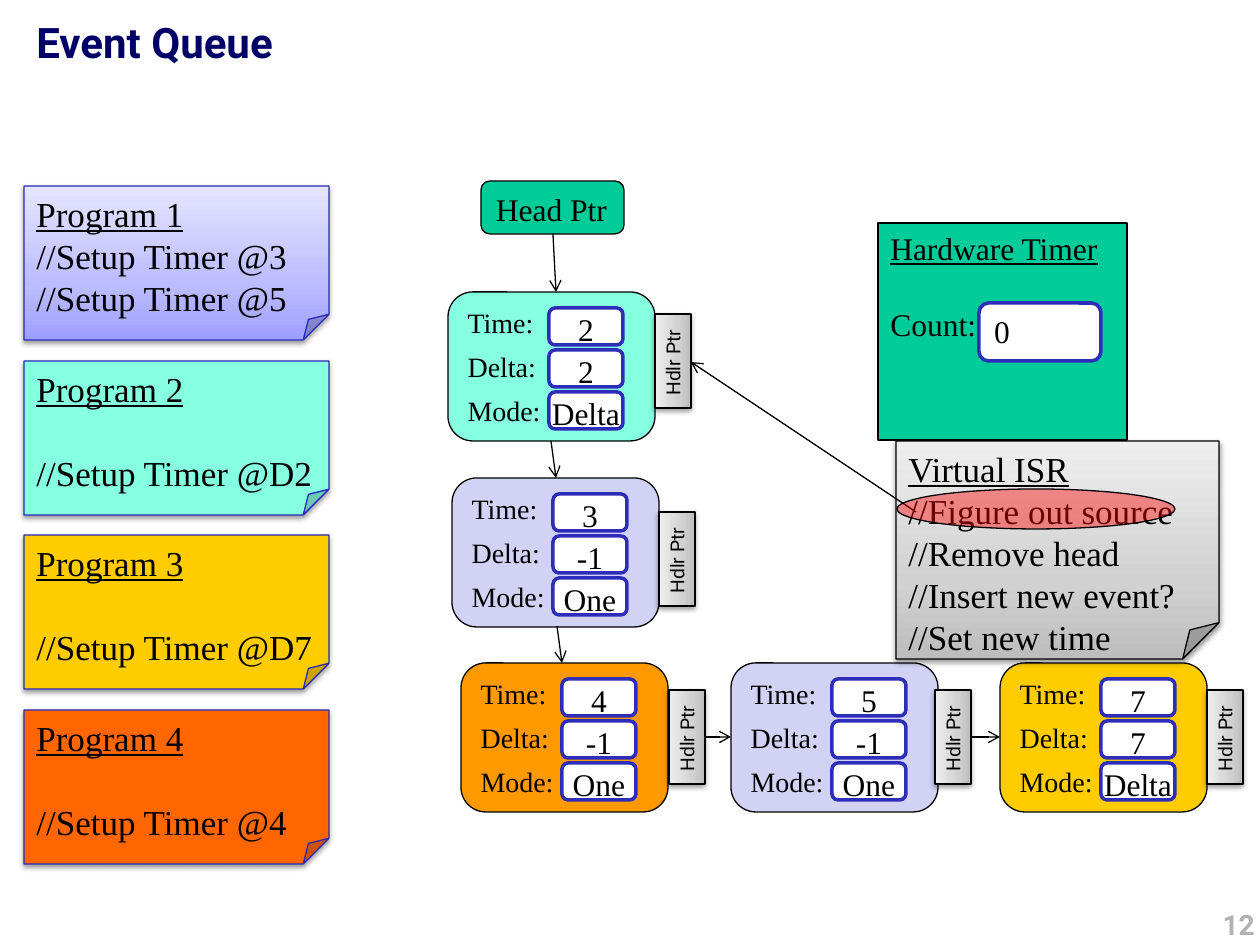
import dataclasses
import typing

import lxml.etree
import pptx
import pptx.dml.color
import pptx.enum.shapes
import pptx.enum.text
import pptx.oxml
import pptx.oxml.ns
import pptx.util

EMU_PER_PX = 914400 / 126
SERIF, SANS = "Times New Roman", "Roboto"
BLACK, WHITE, BLUE, GREEN = "000000", "FFFFFF", "2D2DB9", "00CC99"
AQUA, LAVENDER, YELLOW = "85FFE0", "D2D2F4", "FFCC00"
GREY_FADE = ("BDBDBD", "D1D1D1", "EEEEEE")
BLUE_FADE = ("9F9FFF", "BBBBFF", "E5E5FF")
NODE_WIDTH, NODE_HEIGHT = 207, 149
HANDLER_LENGTH, HANDLER_THICKNESS = 94, 36
SHAPES = pptx.enum.shapes.MSO_SHAPE
ALIGN = pptx.enum.text.PP_ALIGN
Fill = typing.Union[str, tuple[str, str, str]]


@dataclasses.dataclass
class Node:
    """An event in the queue with its three values and handler position."""

    left: int
    top: int
    fill: str
    values: tuple[str, str, str]
    handler_left: int
    handler_top: int


@dataclasses.dataclass
class Program:
    """A program note with its fill and its lines."""

    fill: Fill
    lines: list[str]
    gap: int = 24


NODES = [
    Node(448, 292, AQUA, ("2", "2", "Delta"), 655, 314),
    Node(452, 478, LAVENDER, ("3", "-1", "One"), 659, 512),
    Node(731, 663, LAVENDER, ("5", "-1", "One"), 935, 690),
    Node(1000, 663, YELLOW, ("7", "7", "Delta"), 1207, 690),
    Node(461, 663, "FF9900", ("4", "-1", "One"), 669, 690),
]
PROGRAMS = [
    Program(BLUE_FADE, ["Program 1", "//Setup Timer @3", "//Setup Timer @5"], 0),
    Program(AQUA, ["Program 2", "//Setup Timer @D2"]),
    Program(YELLOW, ["Program 3", "//Setup Timer @D7"]),
    Program("FF6600", ["Program 4", "//Setup Timer @4"]),
]
QUEUE_ARROWS = [
    (553, 234, 556, 292),
    (551, 441, 556, 478),
    (557, 626, 562, 663),
    (668, 737, 731, 737),
    (937, 737, 1000, 737),
]


def px(value: float) -> pptx.util.Emu:
    """Turn px into EMU."""
    return pptx.util.Emu(round(value * EMU_PER_PX))


def color(value: str) -> pptx.dml.color.RGBColor:
    """Turn a hex string into a colour."""
    return pptx.dml.color.RGBColor.from_string(value)


def write(shape, text: str, size: int = 18, font: str = SERIF, ink: str = BLACK,
          bold: bool = False, heading: bool = False, align=ALIGN.LEFT, gap: float = 0,
          space_after: int = 0, wrap: bool = True, inset: bool = True) -> None:
    """Write lines of text, with an optional underlined heading and a gap below it."""
    frame = shape.text_frame
    frame.word_wrap = wrap
    frame.vertical_anchor = pptx.enum.text.MSO_ANCHOR.TOP
    if not inset:
        frame.margin_left = frame.margin_right = frame.margin_top = frame.margin_bottom = 0
    for index, line in enumerate(text.split("\n")):
        paragraph = frame.add_paragraph() if index else frame.paragraphs[0]
        paragraph.alignment = align
        paragraph.space_after = pptx.util.Pt(space_after)
        paragraph.space_before = pptx.util.Pt(gap if index == 1 else 0)
        run = paragraph.add_run()
        run.text = line
        run.font.size = pptx.util.Pt(size)
        run.font.name = font
        run.font.bold = bold
        run.font.underline = heading and index == 0
        run.font.color.rgb = color(ink)


def paint(shape, fill: Fill) -> None:
    """Fill a shape with one colour or with a fade from bottom to top."""
    if isinstance(fill, str):
        shape.fill.solid()
        shape.fill.fore_color.rgb = color(fill)
        return
    stops = "".join(f'<a:gs pos="{position}"><a:srgbClr val="{value}"/></a:gs>'
                    for position, value in zip((0, 35000, 100000), fill))
    shape._element.spPr.insert(2, pptx.oxml.parse_xml(
        f'<a:gradFill {pptx.oxml.ns.nsdecls("a")} rotWithShape="1"><a:gsLst>{stops}</a:gsLst>'
        '<a:lin ang="16200000" scaled="0"/></a:gradFill>'))


def add_shape(shapes, kind, left: int, top: int, width: int, height: int, fill: Fill,
              line: str = BLACK, line_width: float = 0.75, shadow: bool = False):
    """Add a preset shape with its fill, outline and optional shadow."""
    shape = shapes.add_shape(kind, px(left), px(top), px(width), px(height))
    paint(shape, fill)
    shape.line.color.rgb = color(line)
    shape.line.width = pptx.util.Pt(line_width)
    shape.shadow.inherit = False
    if shadow:
        effects = shape._element.spPr.find(pptx.oxml.ns.qn("a:effectLst"))
        effects.append(pptx.oxml.parse_xml(
            f'<a:outerShdw {pptx.oxml.ns.nsdecls("a")} blurRad="39370" dist="20320" dir="5400000" '
            'rotWithShape="0"><a:srgbClr val="000000"><a:alpha val="38000"/></a:srgbClr></a:outerShdw>'))
    return shape


def add_value_box(shapes, left: int, top: int, width: int, height: int):
    """Add a white rounded box for a value."""
    return add_shape(shapes, SHAPES.ROUNDED_RECTANGLE, left, top, width, height, WHITE, BLUE, 2)


def add_arrow(slide, start_x: int, start_y: int, end_x: int, end_y: int) -> None:
    """Add a thin line with an open arrowhead at its end."""
    connector = slide.shapes.add_connector(pptx.enum.shapes.MSO_CONNECTOR.STRAIGHT,
                                           px(start_x), px(start_y), px(end_x), px(end_y))
    connector.line.color.rgb = color(BLACK)
    connector.line.width = pptx.util.Pt(0.75)
    qn = pptx.oxml.ns.qn
    lxml.etree.SubElement(connector.line._get_or_add_ln(), qn("a:tailEnd"), type="arrow")
    lxml.etree.SubElement(connector._element.spPr, qn("a:effectLst"))


def add_node(slide, node: Node) -> None:
    """Add an event node as a group of a card and three value boxes."""
    shapes = slide.shapes.add_group_shape().shapes
    card = add_shape(shapes, SHAPES.ROUNDED_RECTANGLE, node.left, node.top,
                     NODE_WIDTH, NODE_HEIGHT, node.fill)
    write(card, "Time:\nDelta:\nMode:", size=16, space_after=6)
    for row, value in enumerate(node.values):
        box = add_value_box(shapes, node.left + 101, node.top + 16 + 42 * row, 74, 37)
        write(box, value, align=ALIGN.CENTER, wrap=False, inset=False)


def add_handler(slide, node: Node) -> None:
    """Add the upright handler tab beside a node."""
    shift = (HANDLER_LENGTH - HANDLER_THICKNESS) // 2
    tab = add_shape(slide.shapes, SHAPES.RECTANGLE, node.handler_left - shift,
                    node.handler_top + shift, HANDLER_LENGTH, HANDLER_THICKNESS,
                    GREY_FADE, shadow=True)
    tab.rotation = 270
    write(tab, "Hdlr Ptr", size=11, font=SANS, wrap=False)


def add_label(slide, left: int, top: int, width: int, height: int, text: str, **style) -> None:
    """Add a bold text box."""
    box = slide.shapes.add_textbox(px(left), px(top), px(width), px(height))
    write(box, text, font=SANS, bold=True, **style)


def main() -> None:
    """Build the slide and save it."""
    presentation = pptx.Presentation()
    presentation.slide_width, presentation.slide_height = px(1260), px(945)
    slide = presentation.slides.add_slide(presentation.slide_layouts[6])
    shapes = slide.shapes

    add_label(slide, 24, 10, 1223, 126, "Event Queue", size=24, ink="000066")
    add_label(slide, 869, 901, 398, 63, "12", size=16, ink="B2B2B2", align=ALIGN.RIGHT)
    for index, program in enumerate(PROGRAMS):
        note = add_shape(shapes, SHAPES.FOLDED_CORNER, 24, round(186 + 174.7 * index), 305, 154,
                         program.fill, "2929B8", shadow=True)
        write(note, "\n".join(program.lines), size=20, heading=True, gap=program.gap)

    head = add_shape(shapes, SHAPES.ROUNDED_RECTANGLE, 481, 181, 143, 53, GREEN)
    write(head, "Head Ptr")
    timer = add_shape(shapes, SHAPES.RECTANGLE, 878, 223, 249, 217, GREEN)
    write(timer, "Hardware Timer\nCount:", heading=True, gap=21.6)
    write(add_value_box(shapes, 979, 303, 122, 58), "0")

    for node in NODES:
        add_node(slide, node)
    for arrow in QUEUE_ARROWS:
        add_arrow(slide, *arrow)
    for node in NODES:
        add_handler(slide, node)

    routine = add_shape(shapes, SHAPES.FOLDED_CORNER, 896, 441, 323, 218, GREY_FADE, shadow=True)
    write(routine, "Virtual ISR\n//Figure out source\n//Remove head\n//Insert new event?\n//Set new time",
          size=20, heading=True)
    add_arrow(slide, 916, 512, 691, 362)
    highlight = add_shape(shapes, SHAPES.OVAL, 897, 489, 278, 40, "FF0000")
    red = highlight._element.spPr.find(".//" + pptx.oxml.ns.qn("a:srgbClr"))
    lxml.etree.SubElement(red, pptx.oxml.ns.qn("a:alpha"), val="42000")
    presentation.save("out.pptx")


if __name__ == "__main__":
    main()
